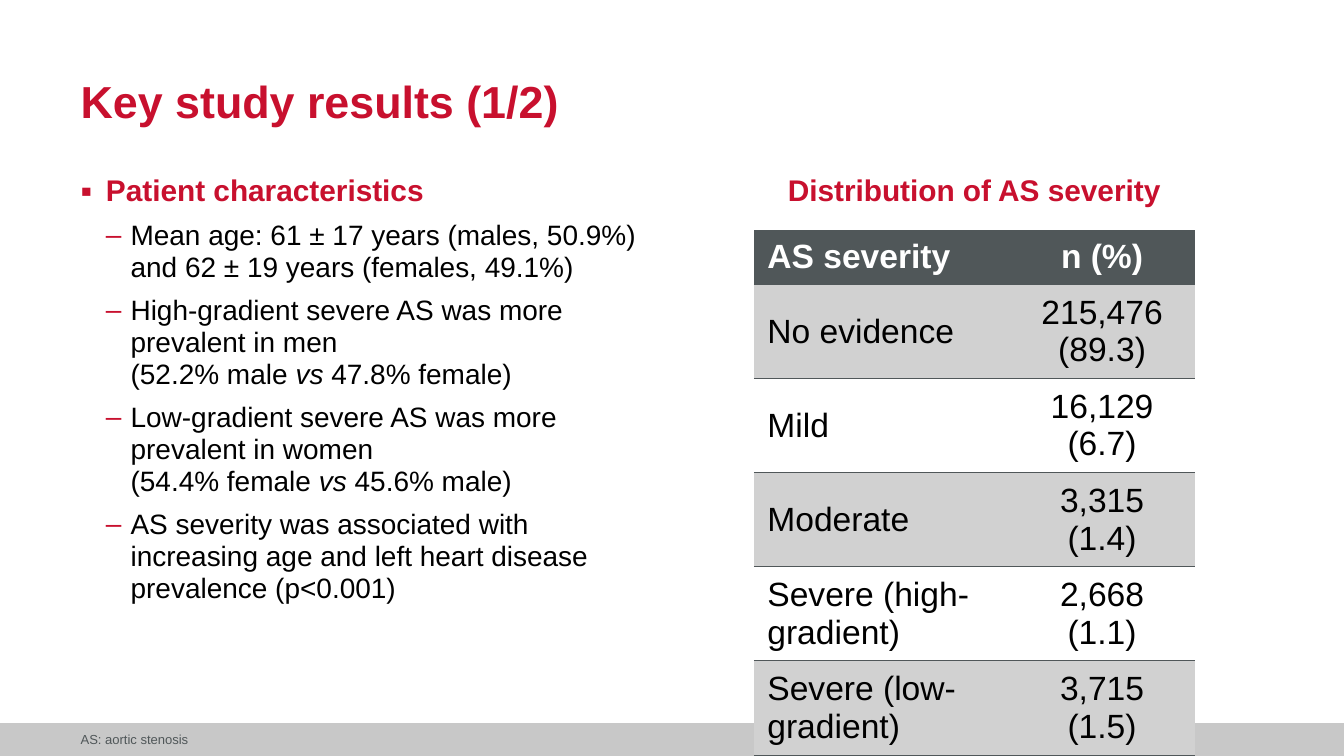
"""Build the key study results slide on aortic stenosis severity."""
from dataclasses import dataclass

from lxml.etree import SubElement
from pptx import Presentation
from pptx.dml.color import RGBColor as Rgb
from pptx.enum.shapes import MSO_SHAPE as Shape
from pptx.enum.text import MSO_ANCHOR as Anchor, PP_ALIGN as Align
from pptx.oxml.ns import qn
from pptx.util import Pt


@dataclass(frozen=True)
class Theme:
    """Colours, type sizes and font of the slide."""
    red: str = "C8102E"
    slate: str = "505759"
    band: str = "D1D1D1"
    footer: str = "C8C8C8"
    black: str = "000000"
    white: str = "FFFFFF"
    title: float = 24
    heading: float = 16
    body: float = 15
    table: float = 18
    note: float = 7
    font: str = "Arial"


THEME = Theme()
LEFT, BODY_TOP, BODY_WIDTH, BODY_HEIGHT = 43.2, 93.6, 309.6, 273.6
FOOTER_TOP, FOOTER_HEIGHT = 387.4, 17.6

FINDINGS = [
    [["Mean age: 61 ± 17 years (males, 50.9%) and 62 ± 19 years (females, 49.1%)"]],
    [["High-gradient severe AS was more prevalent in men "],
     ["(52.2% male ", "vs", " 47.8% female)"]],
    [["Low-gradient severe AS was more prevalent in women "],
     ["(54.4% female ", "vs", " 45.6% male)"]],
    [["AS severity was associated with increasing age and left heart disease "
      "prevalence (p<0.001)"]],
]
SEVERITY = [
    ("AS severity", "n (%)"),
    ("No evidence", "215,476 (89.3)"),
    ("Mild", "16,129 (6.7)"),
    ("Moderate", "3,315 (1.4)"),
    ("Severe (high-gradient)", "2,668 (1.1)"),
    ("Severe (low-gradient)", "3,715 (1.5)"),
]


def apply(target, values):
    """Set every attribute of a dict of format values."""
    for attribute, value in values.items():
        setattr(target, attribute, value)


def write(paragraph, words, size, colour, **style):
    """Add one formatted run to a paragraph."""
    run = paragraph.add_run()
    run.text = words
    apply(run.font, {"name": THEME.font, "size": Pt(size), **style})
    run.font.color.rgb = Rgb.from_string(colour)


def add_frame(slide, left, top, width, height, anchor=Anchor.TOP):
    """Add a wrapping text box without insets and return its text frame."""
    frame = slide.shapes.add_textbox(Pt(left), Pt(top), Pt(width), Pt(height)).text_frame
    apply(frame, {"word_wrap": True, "vertical_anchor": anchor, "margin_left": 0,
                  "margin_right": 0, "margin_top": 0, "margin_bottom": 0})
    return frame


def add_bullet(paragraph, mark, left, hanging, percent=100):
    """Give a paragraph a red hanging bullet."""
    properties = paragraph._p.get_or_add_pPr()
    properties.set("marL", str(Pt(left)))
    properties.set("indent", str(-Pt(hanging)))
    colour = SubElement(properties, qn("a:buClr"))
    SubElement(colour, qn("a:srgbClr"), val=THEME.red)
    SubElement(properties, qn("a:buSzPct"), val=str(percent * 1000))
    SubElement(properties, qn("a:buFont"), typeface=THEME.font)
    SubElement(properties, qn("a:buChar"), char=mark)


def add_footer(slide):
    """Add the grey band and its abbreviation note."""
    band = slide.shapes.add_shape(Shape.RECTANGLE, 0, Pt(FOOTER_TOP), Pt(720), Pt(FOOTER_HEIGHT))
    band.shadow.inherit = False
    band.fill.solid()
    band.fill.fore_color.rgb = Rgb.from_string(THEME.footer)
    band.line.fill.background()
    note = add_frame(slide, LEFT, FOOTER_TOP, 514.8, FOOTER_HEIGHT, Anchor.MIDDLE)
    write(note.paragraphs[0], "AS: aortic stenosis", THEME.note, THEME.slate)


def add_heading(slide, words, left, top, width, height, size, spacing, **layout):
    """Add a bold red heading and return its text frame."""
    frame = add_frame(slide, left, top, width, height, layout.get("anchor", Anchor.TOP))
    heading = frame.paragraphs[0]
    apply(heading, {"line_spacing": spacing, "alignment": layout.get("align", Align.LEFT)})
    write(heading, words, size, THEME.red, bold=True)
    return frame


def add_characteristics(slide):
    """Add the bulleted patient findings."""
    frame = add_heading(slide, "Patient characteristics", LEFT, BODY_TOP, BODY_WIDTH,
                        BODY_HEIGHT, THEME.heading, 0.95)
    add_bullet(frame.paragraphs[0], "▪", 13.6, 13.6, 110)
    for lines in FINDINGS:
        finding = frame.add_paragraph()
        apply(finding, {"level": 1, "line_spacing": 0.95, "space_before": Pt(6)})
        add_bullet(finding, "–", 26.8, 13.2)
        for number, line in enumerate(lines):
            if number:
                finding.add_line_break()
            for words in line:
                write(finding, words, THEME.body, THEME.black, italic=words == "vs")


def set_borders(cell, ruled):
    """Rule a cell above and below, or leave it without lines."""
    properties = cell._tc.get_or_add_tcPr()
    for side in ("lnL", "lnR", "lnT", "lnB"):
        line = SubElement(properties, qn(f"a:{side}"), w=str(Pt(0.5)))
        if ruled and side in ("lnT", "lnB"):
            fill = SubElement(line, qn("a:solidFill"))
            SubElement(fill, qn("a:srgbClr"), val=THEME.slate)
        else:
            SubElement(line, qn("a:noFill"))


def fill_cell(cell, words, row, column):
    """Write and format one cell of the severity table."""
    header = row == 0
    set_borders(cell, not header)
    if header or row % 2:
        cell.fill.solid()
        cell.fill.fore_color.rgb = Rgb.from_string(THEME.slate if header else THEME.band)
    else:
        cell.fill.background()
    cell.vertical_anchor = Anchor.MIDDLE
    entry = cell.text_frame.paragraphs[0]
    entry.alignment = Align.CENTER if column else Align.LEFT
    write(entry, words, THEME.table, THEME.white if header else THEME.black, bold=header)


def add_severity_table(slide):
    """Add the distribution of severity."""
    widths, row_height = (136.8, 99.4), 29.2
    table = slide.shapes.add_table(len(SEVERITY), len(widths), Pt(403.9), Pt(123.1),
                                   Pt(sum(widths)), Pt(row_height * len(SEVERITY))).table
    table.horz_banding = False
    for column, width in zip(table.columns, widths):
        column.width = Pt(width)
    for row, entries in enumerate(SEVERITY):
        table.rows[row].height = Pt(row_height)
        for column, words in enumerate(entries):
            fill_cell(table.cell(row, column), words, row, column)


def main():
    """Build and save the slide."""
    deck = Presentation()
    apply(deck, {"slide_width": Pt(720), "slide_height": Pt(405)})
    slide = deck.slides.add_slide(deck.slide_layouts[6])
    add_footer(slide)
    add_heading(slide, "Distribution of AS severity", 367.2, BODY_TOP, BODY_WIDTH,
                BODY_HEIGHT, THEME.heading, 0.95, align=Align.CENTER)
    add_heading(slide, "Key study results (1/2)", LEFT, 28.8, 633.6, 54,
                THEME.title, 0.9, anchor=Anchor.MIDDLE)
    add_characteristics(slide)
    add_severity_table(slide)
    deck.save("out.pptx")


if __name__ == "__main__":
    main()
